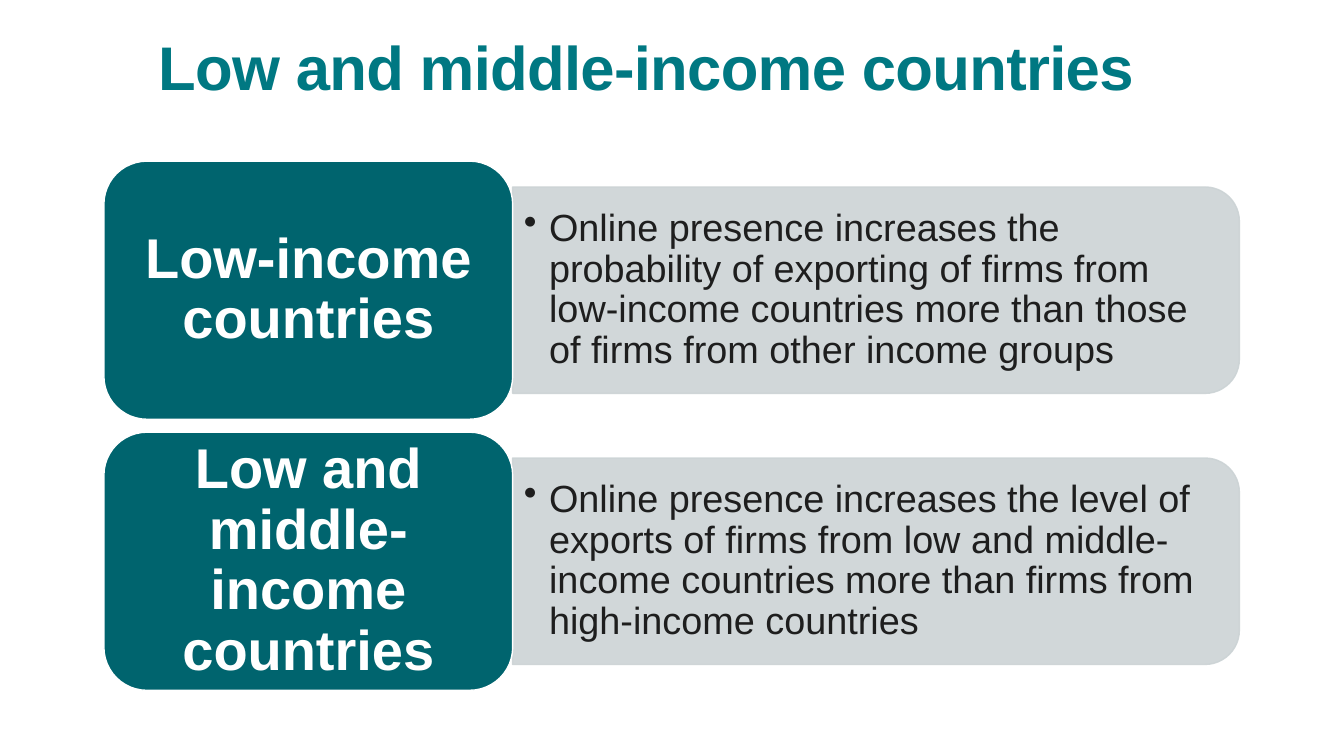
"""Build a slide on online presence and exports of low and middle-income countries."""
from dataclasses import dataclass

import lxml.etree
import pptx
import pptx.dml.color
import pptx.dml.fill
import pptx.enum.shapes
import pptx.enum.text
import pptx.oxml.ns
import pptx.shapes.autoshape
import pptx.slide
import pptx.util

Pt = pptx.util.Pt
RGBColor = pptx.dml.color.RGBColor
Shape = pptx.enum.shapes.MSO_SHAPE
Anchor = pptx.enum.text.MSO_ANCHOR
Align = pptx.enum.text.PP_ALIGN
qn = pptx.oxml.ns.qn

WHITE = RGBColor(0xFF, 0xFF, 0xFF)
TEAL = RGBColor(0x00, 0x64, 0x6E)
TITLE_TEAL = RGBColor(0x00, 0x78, 0x82)
GREY = RGBColor(0xCC, 0xD3, 0xD5)
INK = RGBColor(0x1E, 0x1E, 0x1E)

CARD_LEFT, CARD_WIDTH, CARD_HEIGHT = 74.2, 292, 184.4
PANEL_LEFT = CARD_LEFT + CARD_WIDTH
PANEL_WIDTH, PANEL_HEIGHT = 519.1, 147.5
TEXT_WIDTH, TEXT_HEIGHT = 511.9, 133.2
FIRST_CENTRE, ROW_PITCH = 207.3, 193.6


@dataclass
class Finding:
    """A country group and what holds for it."""
    group: str
    effect: str


FINDINGS = [
    Finding("Low-income countries",
            "Online presence increases the probability of exporting of firms from "
            "low-income countries more than those of firms from other income groups"),
    Finding("Low and middle-income countries",
            "Online presence increases the level of exports of firms from low and "
            "middle-income countries more than firms from high-income countries"),
]


def write(box: pptx.shapes.autoshape.Shape, text: str, *, size: float, color: RGBColor,
          margins: tuple[float, float, float, float], bold: bool = False,
          align: Align = Align.LEFT, anchor: Anchor = Anchor.MIDDLE,
          bullet: bool = False, tracking: float = 0) -> None:
    """Put one formatted paragraph into a box, with margins left, top, right, bottom."""
    frame = box.text_frame
    frame.word_wrap = True
    frame.vertical_anchor = anchor
    frame.margin_left, frame.margin_top, frame.margin_right, frame.margin_bottom = map(Pt, margins)
    para = frame.paragraphs[0]
    para.alignment = align
    para.line_spacing = 0.9
    if bullet:
        para.level = 1
        properties = para._p.get_or_add_pPr()
        properties.set("marL", str(Pt(18)))
        properties.set("indent", str(-Pt(18)))
        lxml.etree.SubElement(properties, qn("a:buChar")).set("char", "•")
    span = para.add_run()
    span.text = text
    span.font.name = "Arial"
    span.font.size = Pt(size)
    span.font.bold = bold
    span.font.color.rgb = color
    if tracking:
        span._r.get_or_add_rPr().set("spc", str(round(tracking * 100)))


def add_block(page: pptx.slide.Slide, kind: Shape, left: float, top: float, width: float,
              height: float, fill: RGBColor, line: RGBColor) -> pptx.shapes.autoshape.Shape:
    """Add a flat filled shape with a thin outline."""
    block = page.shapes.add_shape(kind, Pt(left), Pt(top), Pt(width), Pt(height))
    block.shadow.inherit = False
    block.fill.solid()
    block.fill.fore_color.rgb = fill
    block.line.color.rgb = line
    block.line.width = Pt(1)
    return block


def add_text_box(page: pptx.slide.Slide, left: float, top: float, width: float,
                 height: float) -> pptx.shapes.autoshape.Shape:
    """Add an empty text box."""
    return page.shapes.add_textbox(Pt(left), Pt(top), Pt(width), Pt(height))


def add_panel(page: pptx.slide.Slide, centre: float) -> None:
    """Add a translucent panel turned so that its right corners are round."""
    left = PANEL_LEFT + (PANEL_WIDTH - PANEL_HEIGHT) / 2
    panel = add_block(page, Shape.ROUND_2_SAME_RECTANGLE, left, centre - PANEL_WIDTH / 2,
                      PANEL_HEIGHT, PANEL_WIDTH, GREY, GREY)
    panel.rotation = 90
    for color in panel._element.spPr.iter(qn("a:srgbClr")):
        lxml.etree.SubElement(color, qn("a:alpha")).set("val", "90000")


def add_finding(page: pptx.slide.Slide, finding: Finding, centre: float) -> None:
    """Add one row: panel, effect text and group card."""
    add_panel(page, centre)
    effect = add_text_box(page, PANEL_LEFT, centre - TEXT_HEIGHT / 2, TEXT_WIDTH, TEXT_HEIGHT)
    write(effect, finding.effect, size=27, color=INK, margins=(8, 4, 8, 4), bullet=True)
    card = add_block(page, Shape.ROUNDED_RECTANGLE, CARD_LEFT, centre - CARD_HEIGHT / 2,
                     CARD_WIDTH, CARD_HEIGHT, TEAL, WHITE)
    write(card, finding.group, size=40, color=WHITE, margins=(12, 6, 12, 6),
          bold=True, align=Align.CENTER)


def main() -> None:
    """Build and save the deck."""
    deck = pptx.Presentation()
    deck.slide_width, deck.slide_height = Pt(960), Pt(540)
    page = deck.slides.add_slide(deck.slide_layouts[6])
    for row, finding in enumerate(FINDINGS):
        add_finding(page, finding, FIRST_CENTRE + row * ROW_PITCH)
    title = add_text_box(page, 113, 23, 749.5, 70.6)
    write(title, "Low and middle-income countries", size=44, color=TITLE_TEAL,
          margins=(0, 3.6, 7.2, 3.6), bold=True, anchor=Anchor.TOP, tracking=-0.5)
    deck.save("out.pptx")


if __name__ == "__main__":
    main()
